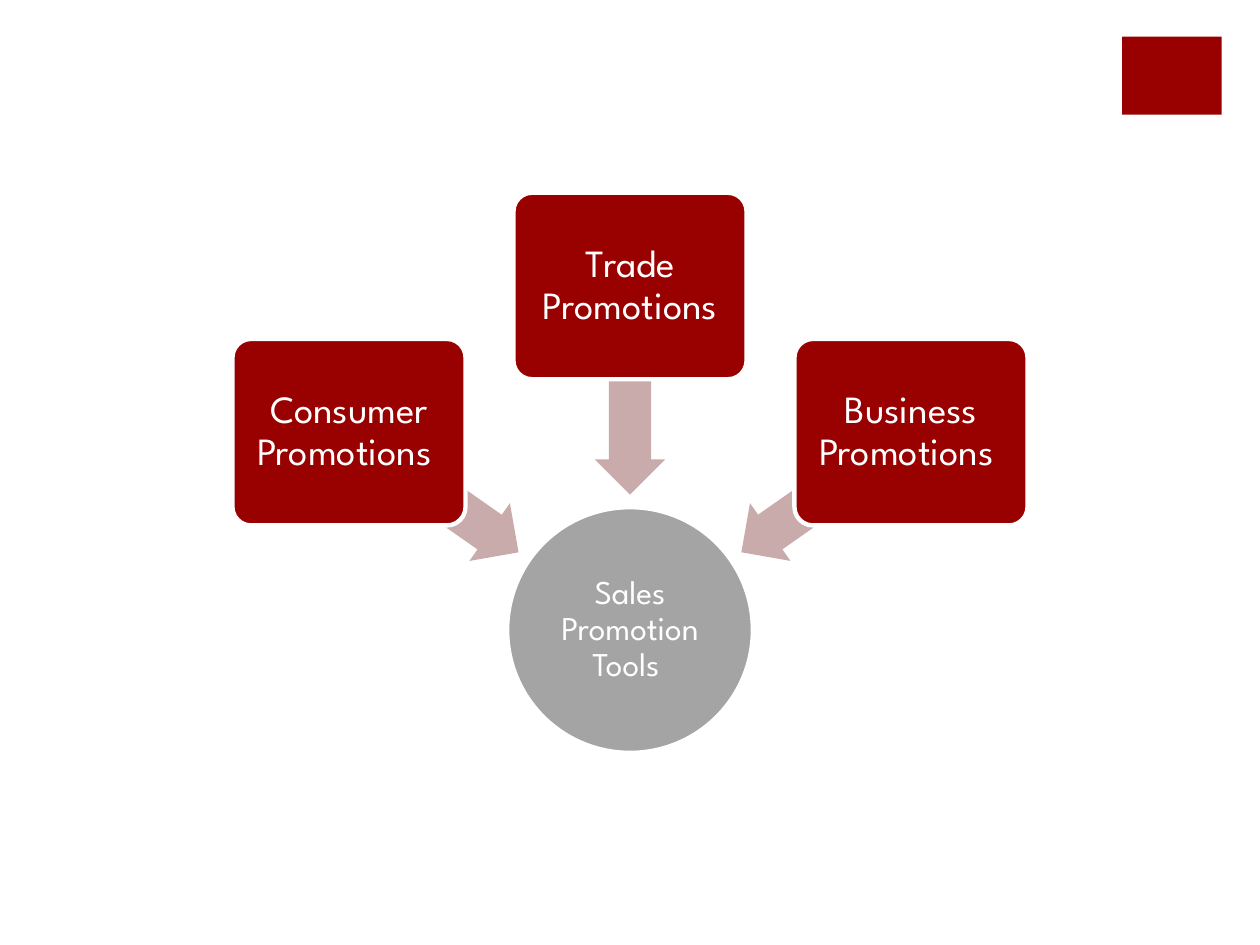
"""Build a slide of three promotion types converging on sales promotion tools."""
import pptx
import pptx.util
from pptx.dml.color import RGBColor
from pptx.enum.shapes import MSO_SHAPE
from pptx.enum.text import MSO_ANCHOR, PP_ALIGN

COLORS = {"red": "990000", "gray": "A4A4A4", "pink": "CAABAB", "white": "FFFFFF"}
FONT = "League Spartan"
WIDTH, HEIGHT = 10, 7.5
HUB = {"text": "Sales Promotion Tools ", "center": (WIDTH / 2, 5), "size": (1.95, 1.95)}
PROMOTIONS = [
    {"text": "Consumer Promotions ", "column": -1, "box_y": 3.43, "arrow_y": 3.91, "rotation": 215},
    {"text": "Trade Promotions", "column": 0, "box_y": 2.27, "arrow_y": 3.1, "rotation": 270},
    {"text": "Business Promotions ", "column": 1, "box_y": 3.43, "arrow_y": 3.91, "rotation": 325},
]
BOX_SIZE, BOX_STEP = (1.85, 1.48), 2.23
ARROW_SIZE, ARROW_STEP = (1.65, 0.56), 1.56


def add_centered(slide, kind, center, size, color):
    left, top = (middle - length / 2 for middle, length in zip(center, size))
    shape = slide.shapes.add_shape(kind, *map(pptx.util.Inches, (left, top, *size)))
    shape.shadow.inherit = False
    shape.fill.solid()
    shape.fill.fore_color.rgb = RGBColor.from_string(COLORS[color])
    shape.line.fill.background()
    return shape


def add_label(shape, text, font_size, inset):
    shape.line.color.rgb = RGBColor.from_string(COLORS["white"])
    shape.line.width = pptx.util.Pt(2.5)
    frame = shape.text_frame
    frame.word_wrap = True
    frame.vertical_anchor = MSO_ANCHOR.MIDDLE
    for side in ("left", "right", "top", "bottom"):
        setattr(frame, f"margin_{side}", pptx.util.Inches(inset))
    frame.text = text
    paragraph = frame.paragraphs[0]
    paragraph.alignment = PP_ALIGN.CENTER
    paragraph.line_spacing = 0.9
    font = paragraph.runs[0].font
    font.name = FONT
    font.size = pptx.util.Pt(font_size)
    font.color.rgb = RGBColor.from_string(COLORS["white"])


def main():
    presentation = pptx.Presentation()
    presentation.slide_width = pptx.util.Inches(WIDTH)
    presentation.slide_height = pptx.util.Inches(HEIGHT)
    slide = presentation.slides.add_slide(presentation.slide_layouts[6])

    add_centered(slide, MSO_SHAPE.RECTANGLE, (9.3, 0.6), (0.79, 0.62), "red")
    hub = add_centered(slide, MSO_SHAPE.OVAL, HUB["center"], HUB["size"], "gray")
    add_label(hub, HUB["text"], 19, 0.01)

    for promotion in PROMOTIONS:
        arrow_x, box_x = (WIDTH / 2 + promotion["column"] * step for step in (ARROW_STEP, BOX_STEP))
        arrow = add_centered(slide, MSO_SHAPE.LEFT_ARROW, (arrow_x, promotion["arrow_y"]), ARROW_SIZE, "pink")
        arrow.adjustments[0] = 0.6
        arrow.adjustments[1] = 0.5
        arrow.rotation = promotion["rotation"]
        box = add_centered(slide, MSO_SHAPE.ROUNDED_RECTANGLE, (box_x, promotion["box_y"]), BOX_SIZE, "red")
        box.adjustments[0] = 0.1
        add_label(box, promotion["text"], 22, 0.05)

    presentation.save("out.pptx")


if __name__ == "__main__":
    main()
